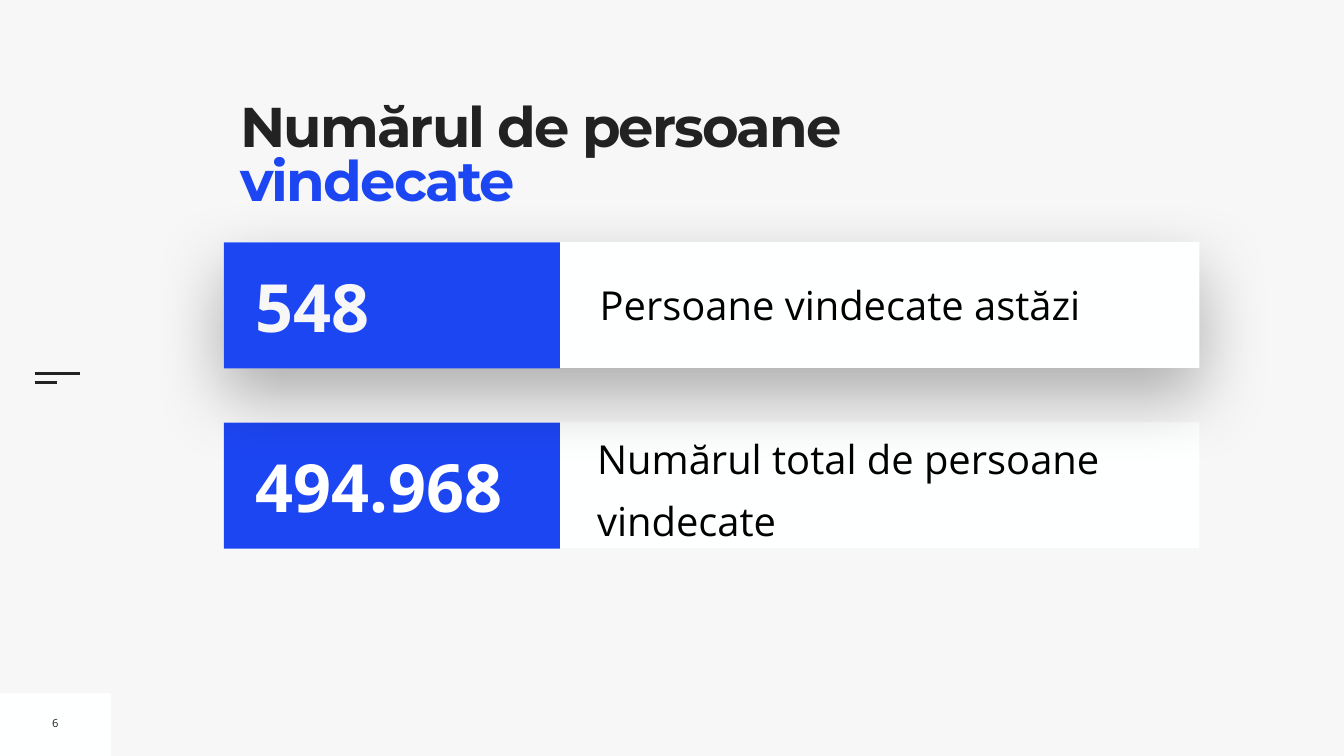
from dataclasses import dataclass

from lxml import etree
from pptx import Presentation
from pptx import util as u
from pptx.dml.color import RGBColor
from pptx.enum import shapes, text
from pptx.oxml.ns import qn

WIDTH, HEIGHT = 26.67, 15
COLUMN, ROW = WIDTH / 6, HEIGHT / 6
COLORS = {
    "back": "F7F7F7",
    "card": "FEFFFF",
    "blue": "1D46F3",
    "dark": "222222",
    "black": "000000",
    "white": "FFFFFF",
}


@dataclass(frozen=True)
class Area:
    left: float
    top: float
    width: float
    height: float

    def emu(self) -> tuple:
        return (u.Inches(self.left * COLUMN), u.Inches(self.top * ROW),
                u.Inches(self.width * COLUMN), u.Inches(self.height * ROW))


@dataclass(frozen=True)
class Style:
    size: float
    color: str
    bold: bool = False
    font: str = "Open Sans"
    spacing: int = 0


@dataclass(frozen=True)
class Card:
    top: float
    number: str
    number_color: str
    label: str
    label_area: Area
    inset: float = 0.1
    line_spacing: float = 1
    space_before: float = 0
    shadow: bool = False


CARDS = [
    Card(3.35, "494.968", "white", "Numărul total de persoane vindecate",
         Area(2.666, 3.356, 2.69, 0.944), 0, 1.3, 20),
    Card(1.92, "548", "back", "Persoane vindecate astăzi",
         Area(2.655, 2.188, 2.65, 0.464), shadow=True),
]


def rgb(name: str) -> RGBColor:
    return RGBColor.from_string(COLORS[name])


def add_run(para, words: str, style: Style) -> None:
    span = para.add_run()
    span.text = words
    span.font.name = style.font
    span.font.size = u.Pt(style.size)
    span.font.bold = style.bold
    span.font.color.rgb = rgb(style.color)
    if style.spacing:
        span.font._element.set("spc", str(style.spacing))


def set_insets(frame, inset: float) -> None:
    frame.margin_left = frame.margin_right = u.Inches(inset)
    frame.margin_top = frame.margin_bottom = u.Inches(inset)


def add_block(page, area: Area, color: str):
    block = page.shapes.add_shape(shapes.MSO_SHAPE.RECTANGLE, *area.emu())
    block.shadow.inherit = False
    block.fill.solid()
    block.fill.fore_color.rgb = rgb(color)
    block.line.fill.background()
    return block


def add_text(page, area: Area, words: str, style: Style,
             inset: float = 0.1, wrap: bool = True):
    box = page.shapes.add_textbox(*area.emu())
    frame = box.text_frame
    frame.word_wrap = wrap
    frame.auto_size = text.MSO_AUTO_SIZE.SHAPE_TO_FIT_TEXT
    frame.vertical_anchor = text.MSO_ANCHOR.MIDDLE
    set_insets(frame, inset)
    para = frame.paragraphs[0]
    add_run(para, words, style)
    return para


def add_shadow(block) -> None:
    effects = block._element.spPr.find(qn("a:effectLst"))
    shadow = etree.SubElement(
        effects, qn("a:outerShdw"), blurRad=str(u.Pt(100)),
        dist=str(u.Pt(40)), dir="5400000", rotWithShape="0")
    color = etree.SubElement(shadow, qn("a:srgbClr"), val=COLORS["black"])
    etree.SubElement(color, qn("a:alpha"), val="30000")


def add_card(page, card: Card) -> None:
    panel = add_block(page, Area(1, card.top, 4.355, 1), "card")
    if card.shadow:
        add_shadow(panel)
    para = add_text(page, card.label_area, card.label, Style(57, "black"), card.inset)
    para.line_spacing = card.line_spacing
    para.space_before = u.Pt(card.space_before)
    add_block(page, Area(1, card.top + 0.004, 1.5, 1), "blue")
    add_text(page, Area(1.12, card.top + 0.144, 1.356, 0.72), card.number,
             Style(95, card.number_color, True))


def add_rule(page, top: float, length: float) -> None:
    left = 0.155 * COLUMN
    rule = page.shapes.add_connector(
        shapes.MSO_CONNECTOR.STRAIGHT, u.Inches(left), u.Inches(top * ROW),
        u.Inches(left + length * COLUMN), u.Inches(top * ROW))
    rule.line.color.rgb = rgb("dark")
    rule.line.width = u.Pt(3)
    etree.SubElement(rule._element.spPr, qn("a:effectLst"))


def add_title(page) -> None:
    title = page.shapes.title
    title.left, title.top, title.width, title.height = Area(1.073, 0.828, 2.927, 1.092).emu()
    title.fill.solid()
    title.fill.fore_color.rgb = rgb("back")
    frame = title.text_frame
    frame.word_wrap = True
    frame.auto_size = text.MSO_AUTO_SIZE.NONE
    frame.vertical_anchor = text.MSO_ANCHOR.TOP
    set_insets(frame, 0)
    para = frame.paragraphs[0]
    para.alignment = text.PP_ALIGN.LEFT
    para.line_spacing = 0.8
    para.space_before = u.Pt(0)
    for words, color in (("Numărul de persoane ", "dark"), ("vindecate", "blue")):
        add_run(para, words, Style(80, color, True, "Montserrat", -270))


def main() -> None:
    deck = Presentation()
    deck.slide_width, deck.slide_height = u.Inches(WIDTH), u.Inches(HEIGHT)
    page = deck.slides.add_slide(deck.slide_layouts.get_by_name("Title Only"))
    page.background.fill.solid()
    page.background.fill.fore_color.rgb = rgb("back")
    add_block(page, Area(0, 5.504, 0.495, 0.496), "card")
    for top, length in ((2.964, 0.2), (3.036, 0.1)):
        add_rule(page, top, length)
    add_title(page)
    number = add_text(page, Area(0.209, 5.636, 0.076, 0.204), "6",
                      Style(16, "dark"), wrap=False)
    number.alignment = text.PP_ALIGN.CENTER
    for card in CARDS:
        add_card(page, card)
    deck.save("out.pptx")


if __name__ == "__main__":
    main()
